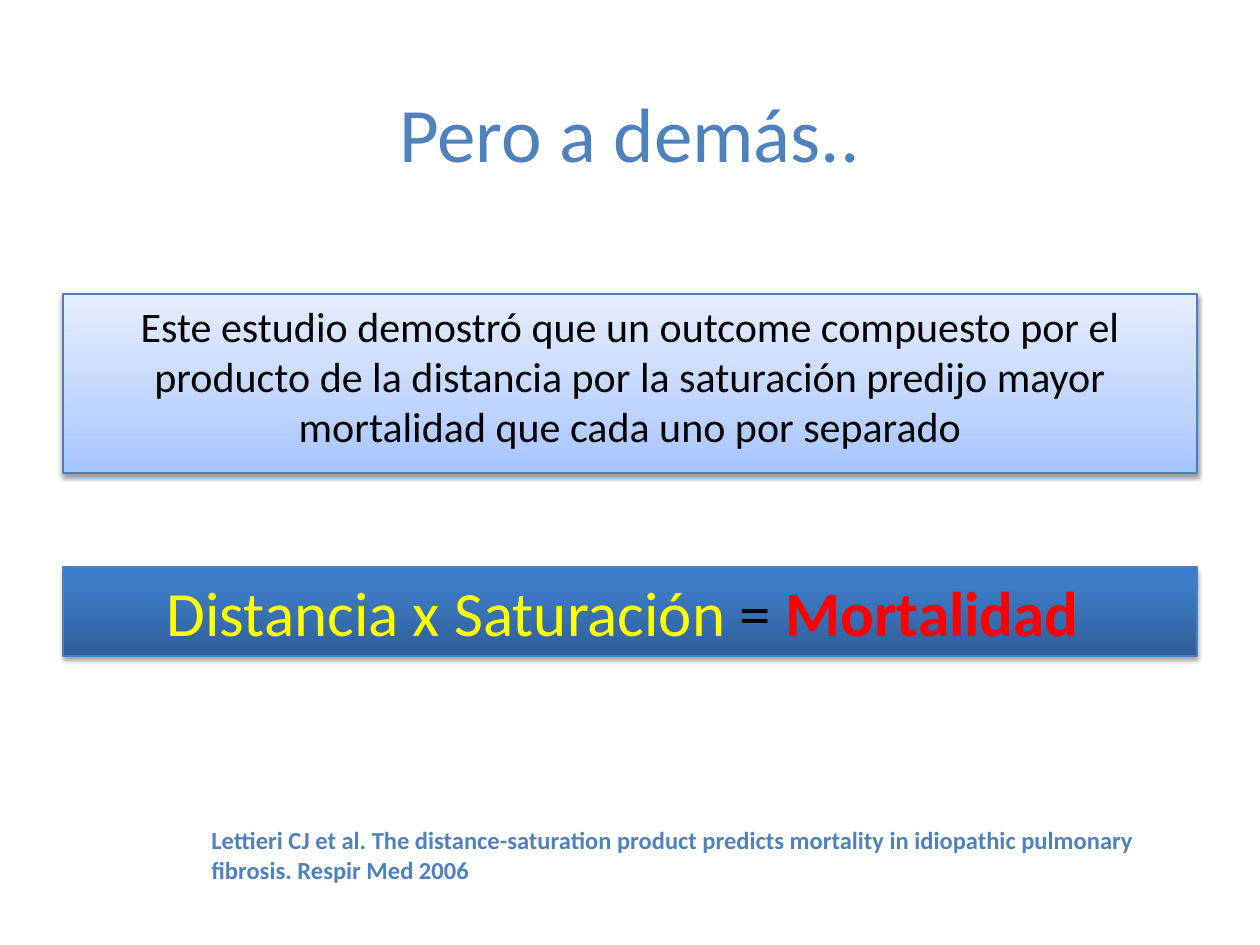
"""Build the slide on the distance-saturation product and mortality."""
import dataclasses

import pptx
import pptx.dml.color
import pptx.enum.shapes
import pptx.enum.text
import pptx.oxml
import pptx.oxml.ns
import pptx.util

SCALE = 914400 / 126
ALIGN = pptx.enum.text.PP_ALIGN
ANCHOR = pptx.enum.text.MSO_ANCHOR


@dataclasses.dataclass(frozen=True)
class Theme:
    font: str = "Calibri"
    accent: str = "4F81BD"
    border: str = "4B7EBC"
    paper: str = "FFFFFF"
    ink: str = "000000"
    factor: str = "FFFF00"
    result: str = "FF0000"
    pale: tuple = ((0, "A4C4FF"), (35, "BFD4FF"), (100, "E6EEFF"))
    deep: tuple = ((0, "2F5F99"), (80, "3D7CC7"), (100, "3A7CCB"))
    title_size: int = 44
    formula_size: int = 36
    finding_size: int = 24
    citation_size: int = 14


THEME = Theme()


def px(length):
    return pptx.util.Emu(round(length * SCALE))


def rgb(value):
    return pptx.dml.color.RGBColor.from_string(value)


def apply(target, formats):
    for key, value in formats.items():
        setattr(target, key, value)


def write(shape, runs, size, align=ALIGN.CENTER, anchor=ANCHOR.TOP):
    frame = shape.text_frame
    apply(frame, {"word_wrap": True, "vertical_anchor": anchor})
    paragraph = frame.paragraphs[0]
    paragraph.alignment = align
    for wording, color, bold in runs:
        run = paragraph.add_run()
        run.text = wording
        apply(run.font, {"name": THEME.font, "size": pptx.util.Pt(size), "bold": bold})
        run.font.color.rgb = rgb(color)


def add_panel(slide, box):
    panel = slide.shapes.add_shape(
        pptx.enum.shapes.MSO_SHAPE.RECTANGLE, *map(px, box))
    panel.shadow.inherit = False
    return panel


def add_title(slide, box, wording):
    title = add_panel(slide, box)
    title.fill.solid()
    title.fill.fore_color.rgb = rgb(THEME.paper)
    title.line.fill.background()
    write(title, [(wording, THEME.accent, False)], THEME.title_size,
          anchor=ANCHOR.MIDDLE)


def add_gradient_panel(slide, box, stops, shadow, runs, size):
    panel = add_panel(slide, box)
    panel.fill.gradient()
    panel.fill.gradient_angle = 90
    properties = panel._element.spPr
    namespace = pptx.oxml.ns.nsdecls("a")
    stop_list = properties.find(".//" + pptx.oxml.ns.qn("a:gsLst"))
    stop_list.clear()
    for position, color in stops:
        stop_list.append(pptx.oxml.parse_xml(
            f'<a:gs {namespace} pos="{position * 1000}"><a:srgbClr val="{color}"/></a:gs>'))
    panel.line.color.rgb = rgb(THEME.border)
    panel.line.width = pptx.util.Pt(0.75)
    opacity, distance = shadow
    properties.find(pptx.oxml.ns.qn("a:effectLst")).append(pptx.oxml.parse_xml(
        f'<a:outerShdw {namespace} blurRad="{pptx.util.Pt(3.1)}" '
        f'dist="{pptx.util.Pt(distance)}" dir="5400000" rotWithShape="0">'
        f'<a:srgbClr val="{THEME.ink}"><a:alpha val="{opacity * 1000}"/></a:srgbClr>'
        '</a:outerShdw>'))
    write(panel, runs, size)


def add_citation(slide, box, wording):
    citation = slide.shapes.add_textbox(*map(px, box))
    write(citation, [(wording, THEME.accent, True)], THEME.citation_size, ALIGN.LEFT)


def main():
    deck = pptx.Presentation()
    apply(deck, {"slide_width": px(1260), "slide_height": px(945)})
    slide = deck.slides.add_slide(deck.slide_layouts[6])
    left, width = 63, 1134
    add_gradient_panel(
        slide, (left, 294, width, 179), THEME.pale, (38, 1.6),
        [("Este estudio demostró que un outcome compuesto por el producto de la "
          "distancia por la saturación predijo mayor mortalidad que cada uno por "
          "separado", THEME.ink, False)], THEME.finding_size)
    add_title(slide, (left, 53, width, 158), "Pero a demás..")
    add_citation(
        slide, (199, 819, 1018, 72),
        "Lettieri CJ et al. The distance-saturation product predicts mortality in "
        "idiopathic pulmonary fibrosis. Respir Med 2006")
    add_gradient_panel(
        slide, (left, 567, width, 89), THEME.deep, (35, 1.8),
        [("Distancia x Saturación ", THEME.factor, False),
         ("= ", THEME.ink, False),
         ("Mortalidad ", THEME.result, True)], THEME.formula_size)
    deck.save("out.pptx")


if __name__ == "__main__":
    main()
